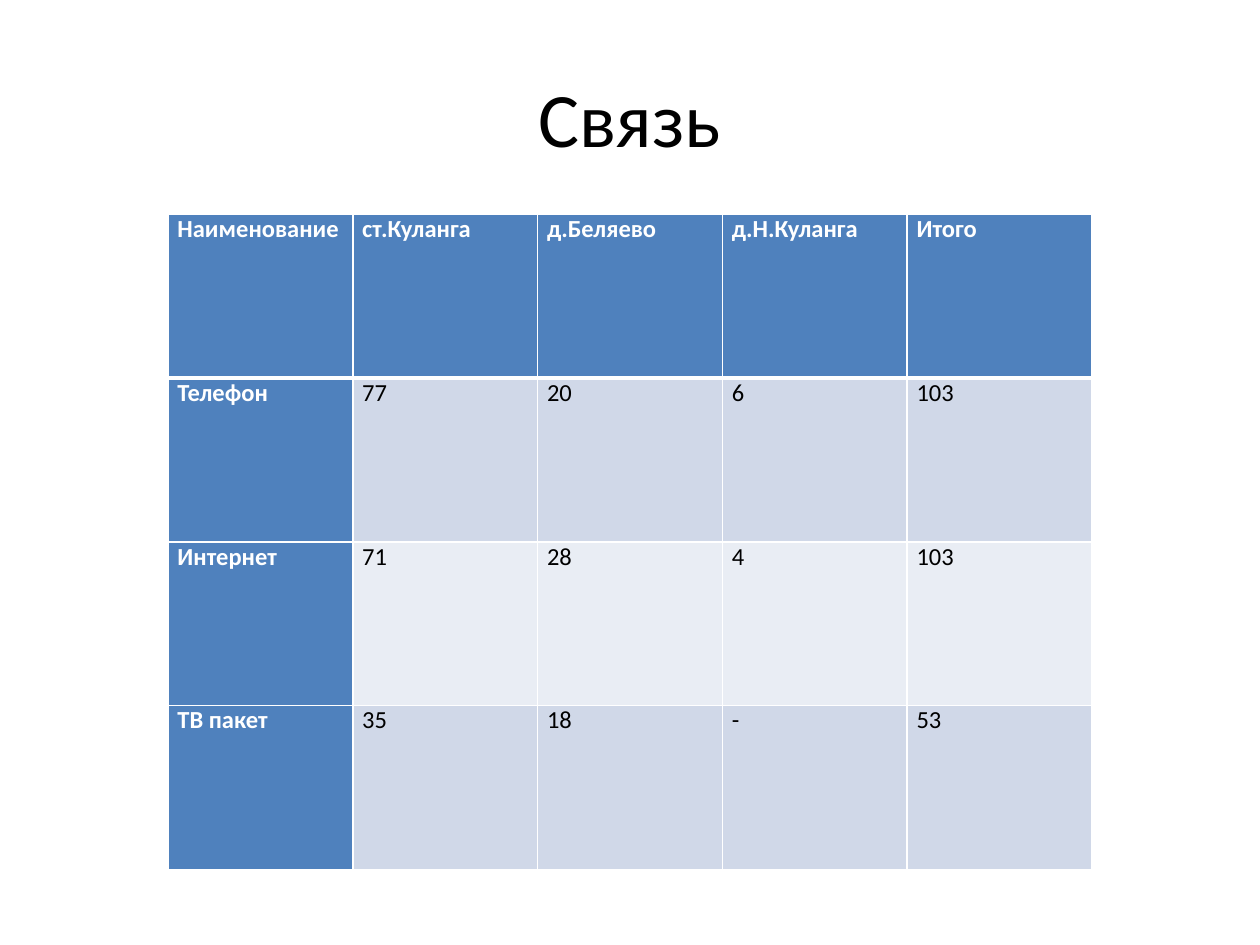
from pptx import Presentation
from pptx.dml.color import RGBColor
from pptx.enum.text import MSO_ANCHOR, PP_ALIGN
from pptx.oxml import parse_xml
from pptx.oxml.ns import nsdecls
from pptx.util import Pt

CENTER = PP_ALIGN.CENTER
MIDDLE = MSO_ANCHOR.MIDDLE
TOP = MSO_ANCHOR.TOP

TITLE = "Связь"
ROWS = [
    ["Наименование", "ст.Куланга", "д.Беляево", "д.Н.Куланга", "Итого"],
    ["Телефон", "77", "20", "6", "103"],
    ["Интернет", "71", "28", "4", "103"],
    ["ТВ пакет", "35", "18", "-", "53"],
]
FONT = "Calibri"
BLACK, WHITE, BLUE = "000000", "FFFFFF", "4F81BD"
BANDS = ["E9EDF4", "D0D8E8"]
TABLE_LEFT, TABLE_TOP = 96, 122.4
COLUMN_WIDTH, ROW_HEIGHT = 105.6, 93.6


def color(value):
    return RGBColor.from_string(value)


def set_font(paragraph, size, value, bold=False):
    paragraph.font.name = FONT
    paragraph.font.size = Pt(size)
    paragraph.font.bold = bold
    paragraph.font.color.rgb = color(value)


def add_borders(cell, widths):
    properties = cell._tc.get_or_add_tcPr()
    for side, width in widths.items():
        properties.append(parse_xml(
            f'<a:ln{side} {nsdecls("a")} w="{Pt(width)}"><a:solidFill>'
            f'<a:srgbClr val="{WHITE}"/></a:solidFill></a:ln{side}>'))


def format_cell(cell, text, row, column):
    is_header = row == 0 or column == 0
    cell.text = text
    cell.margin_left = cell.margin_right = Pt(5.4)
    cell.margin_top = cell.margin_bottom = 0
    cell.vertical_anchor = TOP
    set_font(cell.text_frame.paragraphs[0], 14, WHITE if is_header else BLACK, is_header)
    add_borders(cell, {"L": 1, "R": 1, "T": 3 if row == 1 else 1, "B": 3 if row == 0 else 1})
    cell.fill.solid()
    cell.fill.fore_color.rgb = color(BLUE if is_header else BANDS[row % 2])


def add_title(slide):
    title = slide.shapes.title
    title.left, title.top, title.width, title.height = Pt(36), Pt(21.6), Pt(648), Pt(90)
    title.text_frame.text = TITLE
    title.text_frame.vertical_anchor = MIDDLE
    paragraph = title.text_frame.paragraphs[0]
    paragraph.alignment = CENTER
    set_font(paragraph, 44, BLACK)


def add_connection_table(slide):
    row_count, column_count = len(ROWS), len(ROWS[0])
    table = slide.shapes.add_table(
        row_count, column_count, Pt(TABLE_LEFT), Pt(TABLE_TOP),
        Pt(COLUMN_WIDTH * column_count), Pt(ROW_HEIGHT * row_count)).table
    table.first_col = True
    for column in table.columns:
        column.width = Pt(COLUMN_WIDTH)
    for row in table.rows:
        row.height = Pt(ROW_HEIGHT)
    for row_index, texts in enumerate(ROWS):
        for column_index, text in enumerate(texts):
            format_cell(table.cell(row_index, column_index), text, row_index, column_index)


def main():
    presentation = Presentation()
    presentation.slide_width, presentation.slide_height = Pt(720), Pt(540)
    slide = presentation.slides.add_slide(presentation.slide_layouts[5])
    add_title(slide)
    add_connection_table(slide)
    presentation.save("out.pptx")


if __name__ == "__main__":
    main()
